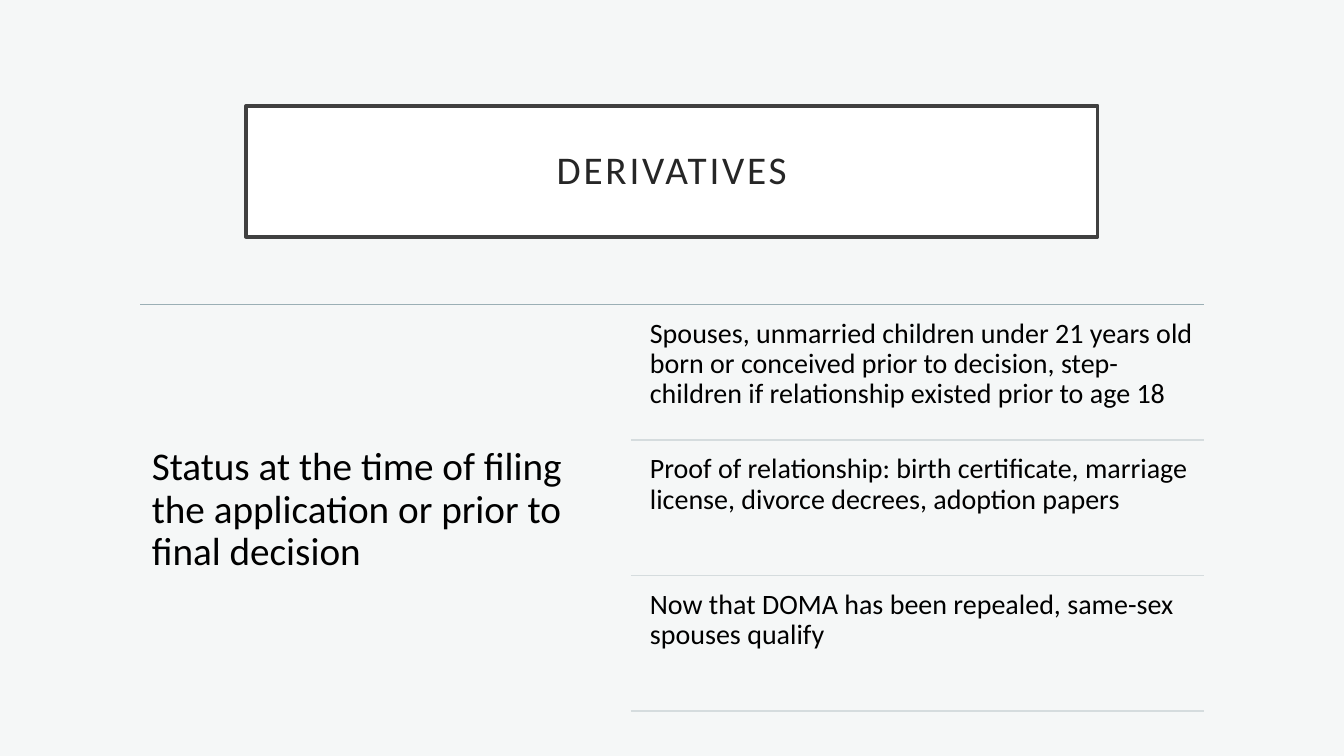
import pptx
import pptx.dml.color
import pptx.enum.shapes
import pptx.enum.text
import pptx.oxml
import pptx.util
from pptx.util import Pt

COLOURS = {
    "background": "F5F7F7",
    "panel": "FFFFFF",
    "frame": "404040",
    "title": "262626",
    "body": "000000",
    "top_rule": "9BAFB5",
    "row_rule": "D5DCDE",
}
ANCHOR = pptx.enum.text.MSO_ANCHOR
ALIGN = pptx.enum.text.PP_ALIGN
STATUS = "Status at the time of filing the application or prior to final decision"
REQUIREMENTS = [
    "Spouses, unmarried children under 21 years old born or conceived prior to "
    "decision, step-children if relationship existed prior to age 18",
    "Proof of relationship: birth certificate, marriage license, divorce decrees, adoption papers",
    "Now that DOMA has been repealed, same-sex spouses qualify",
]
RULE_TOP = 217.4
RULE_RIGHT = 859.7
ROW_PITCH = 96.8


def colour(name):
    """Return the named colour as an RGB value."""
    return pptx.dml.color.RGBColor.from_string(COLOURS[name])


def apply_format(target, values):
    """Set each attribute of the target from a dict."""
    for name, value in values.items():
        setattr(target, name, value)


def write_text(shape, text, size, colour_name, inset, anchor=ANCHOR.TOP, align=ALIGN.LEFT):
    """Write one formatted paragraph in a shape and return its run."""
    margins = {f"margin_{side}": Pt(inset) for side in ("left", "top", "right", "bottom")}
    apply_format(shape.text_frame, {"word_wrap": True, "vertical_anchor": anchor, **margins})
    paragraph = shape.text_frame.paragraphs[0]
    apply_format(paragraph, {"alignment": align, "line_spacing": 0.9})
    run = paragraph.add_run()
    run.text = text
    apply_format(run.font, {"name": "Calibri", "size": Pt(size)})
    run.font.color.rgb = colour(colour_name)
    return run


def add_title(slide, text):
    """Add the framed title with spaced letters."""
    shape = slide.shapes.add_shape(
        pptx.enum.shapes.MSO_SHAPE.RECTANGLE, Pt(175.7), Pt(75.6), Pt(608.4), Pt(93.6)
    )
    shape.shadow.inherit = False
    shape.fill.solid()
    shape.fill.fore_color.rgb = colour("panel")
    shape.line.color.rgb = colour("frame")
    shape.line.width = Pt(2.5)
    run = write_text(shape, text, 28, "title", 14.4, ANCHOR.MIDDLE, ALIGN.CENTER)
    run.font._element.set("spc", "200")


def add_text(slide, text, box, size, inset, anchor=ANCHOR.TOP):
    """Add a wrapped text box."""
    shape = slide.shapes.add_textbox(*map(Pt, box))
    write_text(shape, text, size, "body", inset, anchor)


def add_rule(slide, left, top, colour_name, width):
    """Add a horizontal rule that ends at the right edge of the content."""
    rule = slide.shapes.add_connector(
        pptx.enum.shapes.MSO_CONNECTOR.STRAIGHT, Pt(left), Pt(top), Pt(RULE_RIGHT), Pt(top)
    )
    rule.line.color.rgb = colour(colour_name)
    rule.line.width = Pt(width)
    effects = pptx.oxml.parse_xml(
        '<a:effectLst xmlns:a="http://schemas.openxmlformats.org/drawingml/2006/main"/>'
    )
    rule._element.spPr.append(effects)


def main():
    """Build and save the slide."""
    presentation = pptx.Presentation()
    apply_format(presentation, {"slide_width": Pt(960), "slide_height": Pt(540)})
    slide = presentation.slides.add_slide(presentation.slide_layouts[6])
    slide.background.fill.solid()
    slide.background.fill.fore_color.rgb = colour("background")

    add_title(slide, "DERIVATIVES")
    add_rule(slide, 100.1, RULE_TOP, "top_rule", 0.5)
    add_text(slide, STATUS, (100.1, RULE_TOP, 350.6, 294.5), 28, 8.4, ANCHOR.MIDDLE)
    for index, requirement in enumerate(REQUIREMENTS):
        top = RULE_TOP + 4.6 + index * ROW_PITCH
        add_text(slide, requirement, (458.2, top, 401.2, 92.2), 20, 6)
        add_rule(slide, 450.7, top + 92.2, "row_rule", 1)

    presentation.save("out.pptx")


if __name__ == "__main__":
    main()
